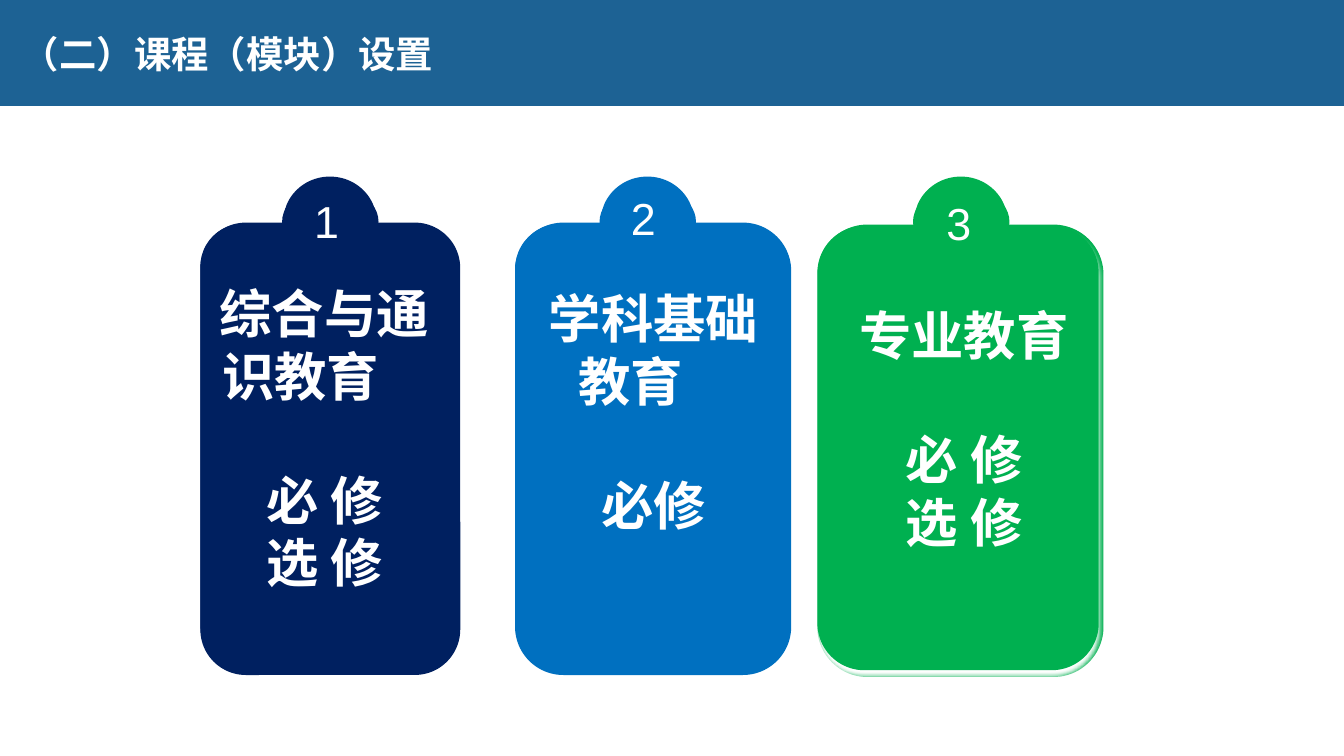
from dataclasses import dataclass

from lxml.etree import SubElement
from pptx import Presentation
from pptx.dml.color import RGBColor
from pptx.enum.shapes import MSO_SHAPE
from pptx.enum.text import MSO_ANCHOR, PP_ALIGN
from pptx.oxml.ns import qn
from pptx.util import Cm, Pt

WHITE = RGBColor(0xFF, 0xFF, 0xFF)
BANNER_BLUE = RGBColor(0x1D, 0x62, 0x94)
NAVY = RGBColor(0x00, 0x20, 0x60)
BLUE = RGBColor(0x00, 0x70, 0xC0)
GREEN = RGBColor(0x00, 0xB0, 0x50)
TITLE_FONT = "Noto Sans CJK SC"
CARD_FONT = "Noto Sans CJK JP"
CARD_SIZE = 37.4
LINE_HEIGHT = Pt(44.5)
HEADING_WIDTH = 5.28
SIDE_INSETS = 0.51


@dataclass
class Card:
    """One course module; lengths are in centimetres."""
    number: str
    heading: str
    kinds: tuple
    color: RGBColor
    body: tuple
    tab_left: float
    number_at: tuple
    text_box: tuple
    hang: float = 0
    raised: bool = False


CARDS = (
    Card("1", "综合与通识教育", ("必 修", "选 修"), NAVY, (5.05, 5.61, 6.55),
         7.14, (7.67, 4.75), (5.05, 6.98, 6.25), hang=0.07),
    Card("2", "学科基础教育", ("必修",), BLUE, (12.98, 5.61, 6.96),
         15.14, (15.65, 4.67), (13.18, 7.11, 6.6), hang=0.74),
    Card("3", "专业教育", ("必 修", "选 修"), GREEN, (20.6, 5.66, 7.21),
         23.04, (23.6, 4.8), (21.11, 7.52, 6.38), raised=True),
)


def add_block(shapes, kind, bounds, color):
    """Add a plain filled shape without outline or shadow."""
    block = shapes.add_shape(kind, *map(Cm, bounds))
    block.shadow.inherit = False
    block.fill.solid()
    block.fill.fore_color.rgb = color
    block.line.fill.background()
    return block


def add_rounded(shapes, bounds, color, rounding):
    """Add a rounded block with the given corner ratio."""
    block = add_block(shapes, MSO_SHAPE.ROUNDED_RECTANGLE, bounds, color)
    block.adjustments[0] = rounding
    return block


def add_white_shadow(shape):
    """Put a soft white shadow below the shape."""
    effects = shape.element.spPr.find(qn("a:effectLst"))
    shadow = SubElement(effects, qn("a:outerShdw"), blurRad=str(Pt(4)),
                        dist=str(Pt(4)), dir="5400000", rotWithShape="0")
    SubElement(shadow, qn("a:srgbClr"), val="FFFFFF")


def add_span(para, text, size, font, bold=False):
    """Add one white run in a Latin and East Asian font."""
    span = para.add_run()
    span.text = text
    span.font.size = Pt(size)
    span.font.bold = bold
    span.font.color.rgb = WHITE
    span.font.name = font
    SubElement(span.font._element, qn("a:ea"), typeface=font)


def add_title(page, text):
    """Add the banner and its title."""
    add_block(page.shapes, MSO_SHAPE.RECTANGLE, (0, 0, 33.87, 2.67), BANNER_BLUE)
    box = page.shapes.add_textbox(0, 0, Cm(33.87), Cm(2.69))
    frame = box.text_frame
    frame.word_wrap = True
    frame.vertical_anchor = MSO_ANCHOR.MIDDLE
    frame.margin_left = Cm(0.55)
    add_span(frame.paragraphs[0], text, 26.7, TITLE_FONT, bold=True)


def add_card_text(shapes, card):
    """Add the hanging heading and the centred course kinds."""
    left, top, width = card.text_box
    box = shapes.add_textbox(Cm(left), Cm(top), Cm(width), Cm(8.23))
    frame = box.text_frame
    frame.word_wrap = True
    para = frame.paragraphs[0]
    para.line_spacing = LINE_HEIGHT
    start = (width - SIDE_INSETS - HEADING_WIDTH) / 2
    properties = para._p.get_or_add_pPr()
    properties.set("marL", str(Cm(start + card.hang)))
    properties.set("indent", str(Cm(-card.hang)))
    add_span(para, card.heading, CARD_SIZE, CARD_FONT, bold=True)
    for index, kind in enumerate(card.kinds):
        para = frame.add_paragraph()
        para.alignment = PP_ALIGN.CENTER
        para.line_spacing = LINE_HEIGHT
        para.space_before = LINE_HEIGHT if index == 0 else Pt(0)
        add_span(para, kind, CARD_SIZE, CARD_FONT, bold=True)


def add_card(page, card):
    """Add one module card with its numbered tab."""
    shapes = page.shapes.add_group_shape().shapes
    left, top, width = card.body
    add_rounded(shapes, (left, top, width, 11.4), card.color, 0.175)
    face = add_rounded(shapes, (left, top + 0.03, width - 0.12, 11.2), card.color, 0.167)
    if card.raised:
        add_white_shadow(face)
    add_block(shapes, MSO_SHAPE.OVAL, (card.tab_left - 0.03, 4.69, 2.43, 1.8), card.color)
    add_block(shapes, MSO_SHAPE.OVAL, (card.tab_left, 4.45, 2.35, 2.26), card.color)
    box = shapes.add_textbox(*map(Cm, card.number_at), Cm(1.14), Cm(1.63))
    box.text_frame.word_wrap = False
    add_span(box.text_frame.paragraphs[0], card.number, 32, "Arial")
    add_card_text(shapes, card)


def main():
    """Build the slide and save the deck."""
    deck = Presentation()
    deck.slide_width, deck.slide_height = Cm(33.87), Cm(19.05)
    page = deck.slides.add_slide(deck.slide_layouts[6])
    add_title(page, "（二）课程（模块）设置")
    for card in CARDS:
        add_card(page, card)
    deck.save("out.pptx")


if __name__ == "__main__":
    main()
